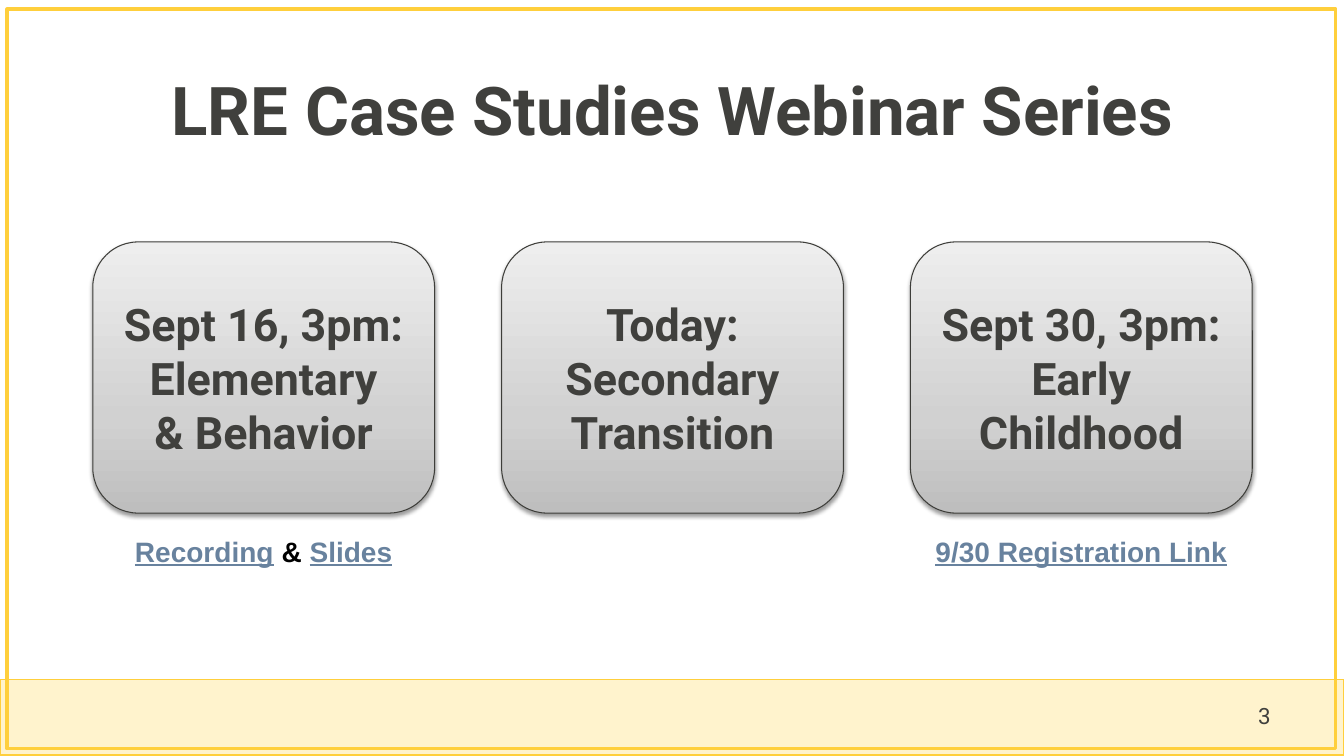
from dataclasses import dataclass
from typing import NamedTuple

from lxml.etree import SubElement
from pptx import Presentation
from pptx.dml.color import RGBColor
from pptx.enum.shapes import MSO_SHAPE
from pptx.enum.text import MSO_ANCHOR, PP_ALIGN
from pptx.oxml.ns import qn
from pptx.util import Inches, Pt

SLIDE_WIDTH, SLIDE_HEIGHT = 13.33, 7.5
MARGIN, CONTENT_WIDTH = 0.92, 11.5
COLUMNS, CARD_WIDTH = 3, 3.39
GAP = (CONTENT_WIDTH - COLUMNS * CARD_WIDTH) / (COLUMNS - 1)
CARD_TOP, CARD_HEIGHT = 2.4, 2.69
LINKS_TOP, LINKS_HEIGHT, LINKS_INSET = 5.25, 0.44, 0.08

INK, OUTLINE, GOLD, CREAM = "40403D", "3E3E3A", "FFCF3C", "FFF3CD"
LINK, BLACK = "68829E", "000000"
CARD_STOPS = ((0, "BEBEBE"), (35, "D1D1D1"), (100, "EEEEEE"))


class Box(NamedTuple):
    left: float
    top: float
    width: float
    height: float

    def lengths(self) -> list:
        return [Inches(length) for length in self]


class Style(NamedTuple):
    size: float
    font: str = "Roboto"
    color: str = INK
    bold: bool = True
    underline: bool = False


class Piece(NamedTuple):
    text: str
    style: Style


@dataclass
class Session:
    lines: list[str]
    links: list[Piece]


TITLE, CARD = Style(48), Style(32)
PAGE = Style(16, bold=False)
LINKED = Style(20, "Arial", LINK, underline=True)
JOINER = Style(20, "Arial", BLACK)

SESSIONS = [
    Session(["Sept 16, 3pm:", "Elementary", "& Behavior"],
            [Piece("Recording", LINKED), Piece(" & ", JOINER), Piece("Slides", LINKED)]),
    Session(["Today:", "Secondary Transition"], []),
    Session(["Sept 30, 3pm:", "Early Childhood"],
            [Piece("9/30 Registration Link", LINKED)]),
]


def rgb(color: str) -> RGBColor:
    return RGBColor.from_string(color)


def write(shape, paragraphs: list[list[Piece]], align=PP_ALIGN.CENTER,
          anchor=MSO_ANCHOR.MIDDLE, spacing: float = 1.0) -> None:
    frame = shape.text_frame
    frame.word_wrap = True
    frame.vertical_anchor = anchor
    for index, pieces in enumerate(paragraphs):
        paragraph = frame.add_paragraph() if index else frame.paragraphs[0]
        paragraph.alignment, paragraph.line_spacing = align, spacing
        for piece in pieces:
            run = paragraph.add_run()
            run.text = piece.text
            style = piece.style
            formats = {"size": Pt(style.size), "name": style.font,
                       "bold": style.bold, "underline": style.underline}
            for name, value in formats.items():
                setattr(run.font, name, value)
            run.font.color.rgb = rgb(style.color)


def add_panel(slide, kind, box: Box, line: str, weight: float, fill: str | None = None):
    panel = slide.shapes.add_shape(kind, *box.lengths())
    panel.shadow.inherit = False
    panel.line.color.rgb, panel.line.width = rgb(line), Pt(weight)
    if fill:
        panel.fill.solid()
        panel.fill.fore_color.rgb = rgb(fill)
    else:
        panel.fill.background()
    return panel


def add_text(slide, box: Box, paragraphs: list[list[Piece]], **layout) -> None:
    write(slide.shapes.add_textbox(*box.lengths()), paragraphs, **layout)


def shade(card) -> None:
    """Give a card its upward three-stop gradient and soft drop shadow."""
    card.fill.gradient()
    card.fill.gradient_angle = 90
    properties = card.fill._xPr
    stops = properties.find(f".//{qn('a:gsLst')}")
    for stop in list(stops):
        stops.remove(stop)
    for position, color in CARD_STOPS:
        stop = SubElement(stops, qn("a:gs"), pos=str(position * 1000))
        SubElement(stop, qn("a:srgbClr"), val=color)
    shadow = SubElement(properties.find(qn("a:effectLst")), qn("a:outerShdw"),
                        blurRad=str(Pt(3.1)), dist=str(Pt(1.6)),
                        dir="5400000", rotWithShape="0")
    tint = SubElement(shadow, qn("a:srgbClr"), val=BLACK)
    SubElement(tint, qn("a:alpha"), val="38000")


def add_session(slide, column: int, session: Session) -> None:
    left = MARGIN + column * (CARD_WIDTH + GAP)
    card = add_panel(slide, MSO_SHAPE.ROUNDED_RECTANGLE,
                     Box(left, CARD_TOP, CARD_WIDTH, CARD_HEIGHT), OUTLINE, 0.75)
    card.adjustments[0] = 0.167
    shade(card)
    write(card, [[Piece(line, CARD)] for line in session.lines])
    if session.links:
        links_box = Box(left + LINKS_INSET, LINKS_TOP,
                        CARD_WIDTH - 2 * LINKS_INSET, LINKS_HEIGHT)
        add_text(slide, links_box, [session.links], anchor=MSO_ANCHOR.TOP)


def main() -> None:
    deck = Presentation()
    deck.slide_width, deck.slide_height = Inches(SLIDE_WIDTH), Inches(SLIDE_HEIGHT)
    slide = deck.slides.add_slide(deck.slide_layouts[6])

    add_panel(slide, MSO_SHAPE.RECTANGLE, Box(0, 6.74, SLIDE_WIDTH, 0.75), GOLD, 1, CREAM)
    add_panel(slide, MSO_SHAPE.RECTANGLE, Box(0.07, 0.09, 13.18, 7.34), GOLD, 2.25)
    add_text(slide, Box(MARGIN, 0.4, CONTENT_WIDTH, 1.45),
             [[Piece("LRE Case Studies Webinar Series", TITLE)]], spacing=0.9)
    add_text(slide, Box(12.38, 6.9, 0.7, 0.4), [[Piece("3", PAGE)]], align=PP_ALIGN.LEFT)
    for column, session in enumerate(SESSIONS):
        add_session(slide, column, session)

    deck.save("out.pptx")


if __name__ == "__main__":
    main()
